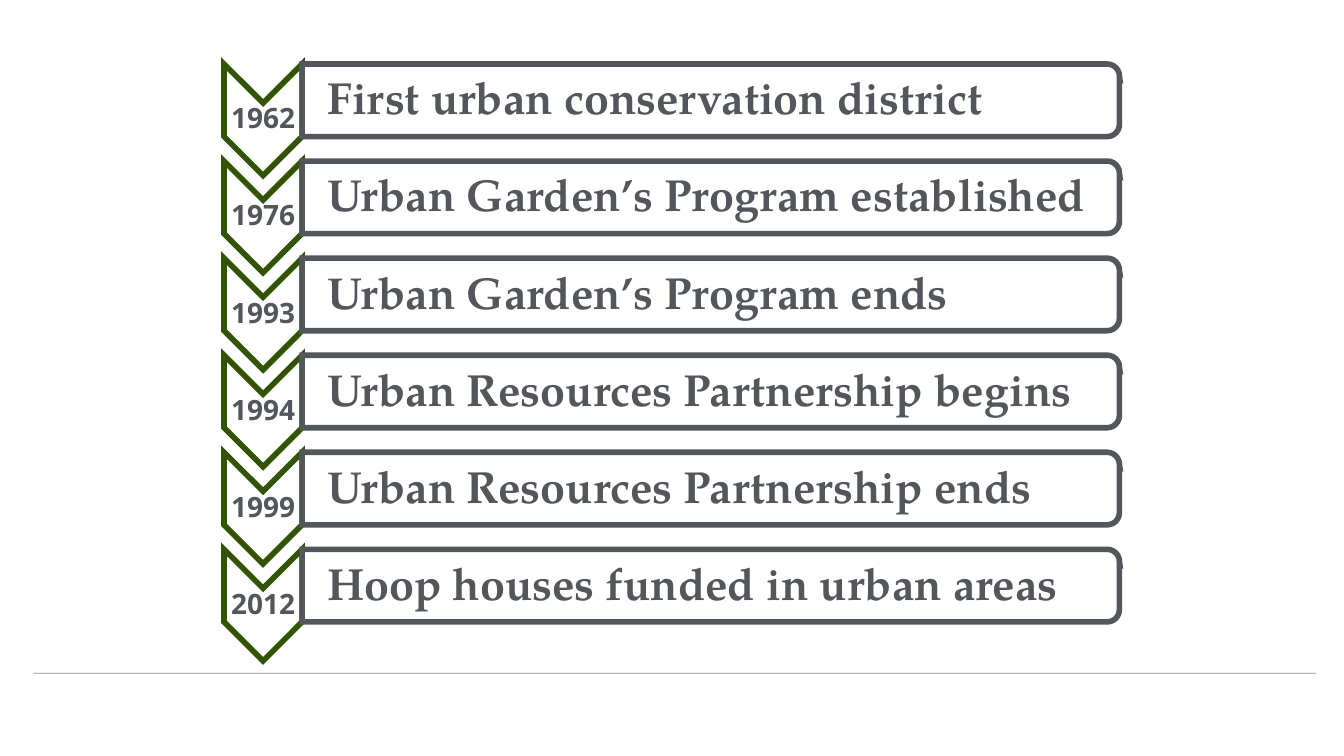
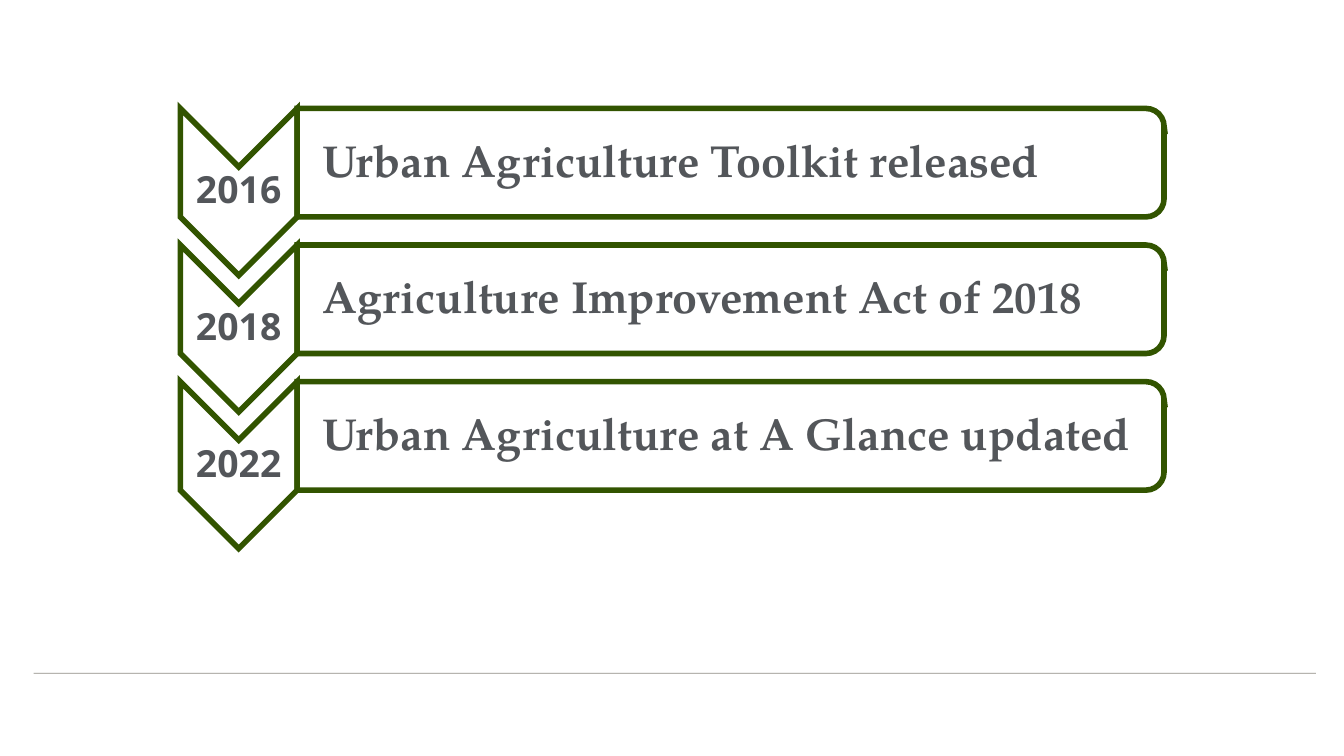
from dataclasses import dataclass

import pptx
import pptx.dml.color
import pptx.enum.shapes
import pptx.enum.text
import pptx.oxml.ns
import pptx.util
from lxml import etree

Pt = pptx.util.Pt
SHAPE = pptx.enum.shapes.MSO_SHAPE
ALIGN = pptx.enum.text.PP_ALIGN

GREEN = "325400"
GREY = "53565A"
RULE_GREY = "69645C"
WHITE = "FFFFFF"
YEAR_FONT = "Noto Sans"
EVENT_FONT = "TeX Gyre Pagella"

CHEVRON_RATIO = 0.7
PANEL_RATIO = 0.65
CORNER_INSET = 0.16667 * 0.29289
OUTLINE_WIDTH = 3
EVENT_SIZE = 24
EVENT_INDENT = 18


@dataclass(frozen=True)
class Frame:
    left: float
    top: float
    width: float
    height: float


@dataclass(frozen=True)
class TextStyle:
    font: str
    size: float
    align: ALIGN
    insets: tuple[float, float, float, float]
    space_after: float
    indent: float = 0


@dataclass(frozen=True)
class Timeline:
    left: float
    top: float
    pitch: float
    chevron_length: float
    panel_width: float
    panel_color: str
    year_size: float
    events: tuple[tuple[str, str], ...]


TIMELINES = (
    Timeline(120, 34.3, 52, 59.8, 437.8, GREY, 15, (
        ("1962", "First urban conservation district"),
        ("1976", "Urban Garden’s Program established"),
        ("1993", "Urban Garden’s Program ends"),
        ("1994", "Urban Resources Partnership begins"),
        ("1999", "Urban Resources Partnership ends"),
        ("2012", "Hoop houses funded in urban areas"),
    )),
    Timeline(96.6, 58.1, 73.2, 89.4, 464.4, GREEN, 20, (
        ("2016", "Urban Agriculture Toolkit released"),
        ("2018", "Agriculture Improvement Act of 2018"),
        ("2022", "Urban Agriculture at A Glance updated"),
    )),
)


def paint(color_format, color: str) -> None:
    color_format.rgb = pptx.dml.color.RGBColor.from_string(color)


def add_element(parent, tag: str, **attributes: str) -> None:
    element = etree.SubElement(parent, pptx.oxml.ns.qn(tag))
    for name, value in attributes.items():
        element.set(name, value)


def set_opacity(fill_parent, percent: int) -> None:
    color = fill_parent.find(pptx.oxml.ns.qn("a:solidFill"))[0]
    add_element(color, "a:alpha", val=str(percent * 1000))


def add_upright(shapes, kind: SHAPE, frame: Frame, turn: float, outline: str):
    left = frame.left + (frame.width - frame.height) / 2
    top = frame.top + (frame.height - frame.width) / 2
    shape = shapes.add_shape(
        kind, Pt(left), Pt(top), Pt(frame.height), Pt(frame.width)
    )
    shape.rotation = turn
    shape.shadow.inherit = False
    shape.line.width = Pt(OUTLINE_WIDTH)
    shape.line.fill.solid()
    paint(shape.line.color, outline)
    add_element(shape.line._get_or_add_ln(), "a:miter", lim="800000")
    return shape


def add_label(shapes, frame: Frame, text: str, style: TextStyle) -> None:
    box = shapes.add_textbox(
        Pt(frame.left), Pt(frame.top), Pt(frame.width), Pt(frame.height)
    )
    body = box.text_frame
    body.word_wrap = True
    body.vertical_anchor = pptx.enum.text.MSO_ANCHOR.MIDDLE
    body.margin_left, body.margin_top, body.margin_right, body.margin_bottom = (
        Pt(inset) for inset in style.insets
    )
    para = body.paragraphs[0]
    para.alignment = style.align
    para.line_spacing = 0.9
    para.space_after = Pt(style.space_after)
    if style.indent:
        properties = para._p.get_or_add_pPr()
        properties.set("marL", str(Pt(style.indent)))
        properties.set("indent", str(-Pt(style.indent)))
        add_element(properties, "a:buNone")
    span = para.add_run()
    span.text = text
    span.font.name = style.font
    span.font.size = Pt(style.size)
    span.font.bold = True
    paint(span.font.color, GREY)


def add_timeline(page, timeline: Timeline) -> None:
    shapes = page.shapes.add_group_shape().shapes
    length = timeline.chevron_length
    breadth = length * CHEVRON_RATIO
    panel_height = length * PANEL_RATIO
    inset = panel_height * CORNER_INSET
    panel_left = timeline.left + breadth
    year_style = TextStyle(
        YEAR_FONT, timeline.year_size, ALIGN.CENTER, (0.72,) * 4,
        timeline.year_size * 0.35,
    )
    event_style = TextStyle(
        EVENT_FONT, EVENT_SIZE, ALIGN.LEFT, (13.44, 1.2, 1.2, 1.2),
        EVENT_SIZE * 0.15, EVENT_INDENT,
    )
    for index, (year, event) in enumerate(timeline.events):
        top = timeline.top + index * timeline.pitch
        chevron = add_upright(
            shapes, SHAPE.CHEVRON,
            Frame(timeline.left, top, breadth, length), 90, GREEN,
        )
        chevron.fill.background()
        add_label(
            shapes,
            Frame(timeline.left, top + breadth / 2, breadth, length - breadth),
            year, year_style,
        )
        panel = add_upright(
            shapes, SHAPE.ROUND_2_SAME_RECTANGLE,
            Frame(panel_left, top, timeline.panel_width, panel_height),
            90, timeline.panel_color,
        )
        panel.fill.solid()
        paint(panel.fill.fore_color, WHITE)
        set_opacity(panel._element.spPr, 90)
        add_label(
            shapes,
            Frame(panel_left, top + inset, timeline.panel_width - inset,
                  panel_height - 2 * inset),
            event, event_style,
        )


def add_footer_rule(page) -> None:
    rule = page.shapes.add_connector(
        pptx.enum.shapes.MSO_CONNECTOR.STRAIGHT,
        Pt(18), Pt(360.7), Pt(704.9), Pt(360.7),
    )
    rule.line.width = Pt(0.5)
    rule.line.fill.solid()
    paint(rule.line.color, RULE_GREY)
    set_opacity(rule.line._get_or_add_ln(), 75)
    add_element(rule._element.spPr, "a:effectLst")


def main() -> None:
    deck = pptx.Presentation()
    deck.slide_width, deck.slide_height = Pt(720), Pt(405)
    for timeline in TIMELINES:
        page = deck.slides.add_slide(deck.slide_layouts[6])
        page.background.fill.solid()
        paint(page.background.fill.fore_color, WHITE)
        add_footer_rule(page)
        add_timeline(page, timeline)
    deck.save("out.pptx")


if __name__ == "__main__":
    main()
